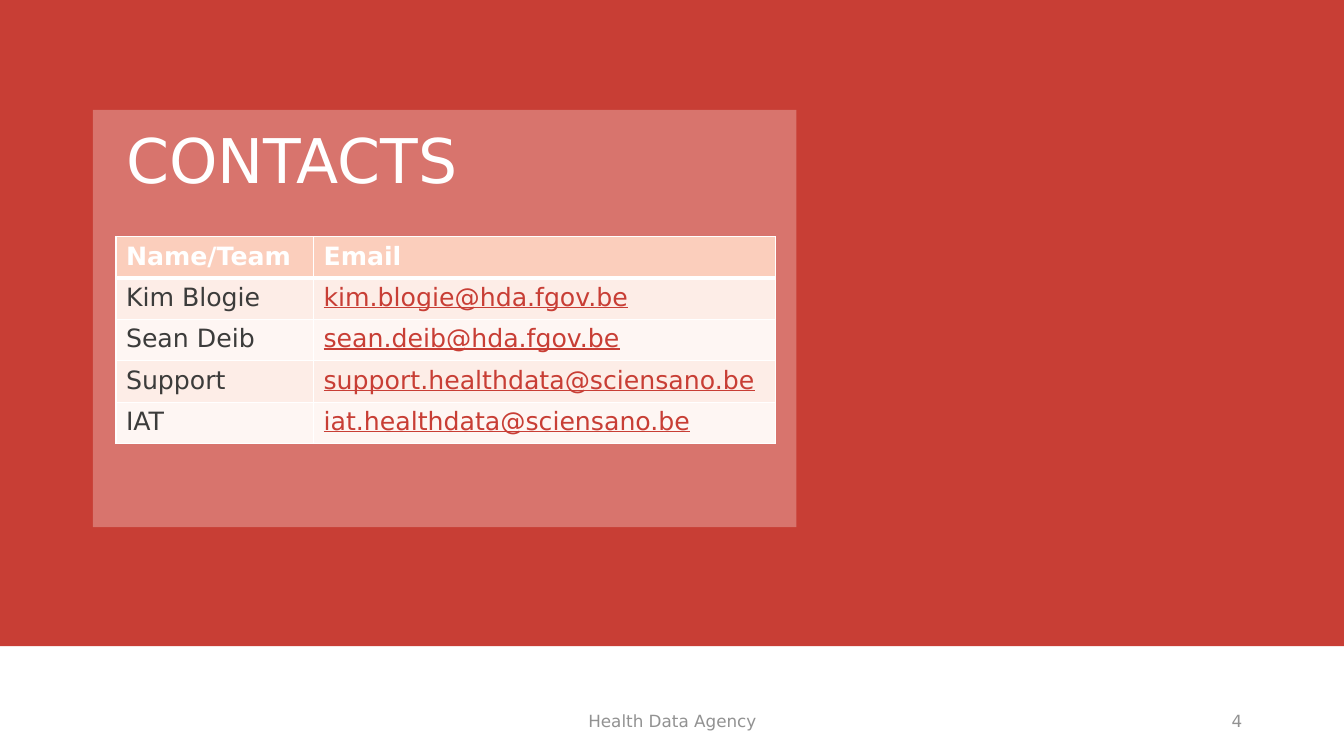
from lxml import etree
from pptx import Presentation
from pptx.dml.color import RGBColor
from pptx.enum.shapes import MSO_SHAPE
from pptx.enum.text import MSO_ANCHOR, MSO_AUTO_SIZE, PP_ALIGN
from pptx.oxml.ns import qn
from pptx.util import Inches, Pt

RECTANGLE = MSO_SHAPE.RECTANGLE
MIDDLE = MSO_ANCHOR.MIDDLE
NO_AUTOFIT = MSO_AUTO_SIZE.NONE
LEFT, CENTER, RIGHT = PP_ALIGN.LEFT, PP_ALIGN.CENTER, PP_ALIGN.RIGHT

WHITE = RGBColor(0xFF, 0xFF, 0xFF)
RED = RGBColor(0xC8, 0x3E, 0x35)
PINK = RGBColor(0xDF, 0x8B, 0x85)
GREY = RGBColor(0x92, 0x92, 0x92)
DARK = RGBColor(0x3C, 0x3C, 0x3B)
HEADER_FILL = RGBColor(0xFB, 0xCE, 0xBC)
BAND_FILLS = (RGBColor(0xFD, 0xED, 0xE7), RGBColor(0xFE, 0xF6, 0xF3))

CONTACTS = [
    ("Name/Team", "Email"),
    ("Kim Blogie", "kim.blogie@hda.fgov.be"),
    ("Sean Deib", "sean.deib@hda.fgov.be"),
    ("Support", "support.healthdata@sciensano.be"),
    ("IAT", "iat.healthdata@sciensano.be"),
]


class ContactSlide:
    font_name = "DejaVu Sans"

    def __init__(self, presentation):
        self.slide = presentation.slides.add_slide(presentation.slide_layouts[5])
        self.shapes = self.slide.shapes

    def style(self, paragraph, size, color, align=LEFT, bold=False, underline=False):
        paragraph.alignment = align
        font = paragraph.font
        font.name = self.font_name
        font.size = Pt(size)
        font.color.rgb = color
        font.bold = bold
        font.underline = underline

    def panel(self, left, top, width, height, color, opacity=100):
        panel = self.shapes.add_shape(
            RECTANGLE, Inches(left), Inches(top), Inches(width), Inches(height))
        panel.shadow.inherit = False
        panel.fill.solid()
        panel.fill.fore_color.rgb = color
        panel.line.fill.background()
        if opacity < 100:
            tint = panel.element.spPr.find(qn("a:solidFill"))[0]
            etree.SubElement(tint, qn("a:alpha"), val=str(opacity * 1000))

    def title(self, text, left, top, width, height):
        title = self.shapes.title
        title.element.getparent().append(title.element)
        title.left, title.top = Inches(left), Inches(top)
        title.width, title.height = Inches(width), Inches(height)
        frame = title.text_frame
        frame.text = text
        frame.word_wrap = True
        frame.auto_size = NO_AUTOFIT
        frame.vertical_anchor = MIDDLE
        frame.paragraphs[0].line_spacing = 0.9
        self.style(frame.paragraphs[0], 44, WHITE)

    def footer(self, text, left, width, align):
        footer = self.shapes.add_textbox(
            Inches(left), Inches(6.95), Inches(width), Inches(0.4))
        frame = footer.text_frame
        frame.text = text
        frame.word_wrap = True
        frame.vertical_anchor = MIDDLE
        self.style(frame.paragraphs[0], 12, GREY, align)

    def border(self, cell, bottom_width):
        properties = cell._tc.get_or_add_tcPr()
        for side, width in (("L", 1), ("R", 1), ("T", 1), ("B", bottom_width)):
            line = etree.SubElement(properties, qn(f"a:ln{side}"), w=str(Pt(width)))
            fill = etree.SubElement(line, qn("a:solidFill"))
            etree.SubElement(fill, qn("a:srgbClr"), val=str(WHITE))

    def table(self, rows, left, top, column_widths, row_height):
        table = self.shapes.add_table(
            len(rows), len(column_widths), Inches(left), Inches(top),
            Inches(sum(column_widths)), Inches(row_height * len(rows))).table
        for column, width in zip(table.columns, column_widths):
            column.width = Inches(width)
        for r, texts in enumerate(rows):
            table.rows[r].height = Inches(row_height)
            header = r == 0
            for c, text in enumerate(texts):
                cell = table.cell(r, c)
                cell.text = text
                self.border(cell, 3 if header else 1)
                cell.fill.solid()
                cell.fill.fore_color.rgb = HEADER_FILL if header else BAND_FILLS[(r - 1) % 2]
                email = c == 1 and not header
                color = WHITE if header else RED if email else DARK
                self.style(cell.text_frame.paragraphs[0], 18, color,
                           bold=header, underline=email)


def main():
    presentation = Presentation()
    presentation.slide_width = Inches(13.33)
    presentation.slide_height = Inches(7.5)

    contacts = ContactSlide(presentation)
    contacts.panel(0, 0, 13.33, 6.41, RED)
    contacts.panel(0.92, 1.09, 6.98, 4.14, PINK, opacity=70)
    contacts.footer("Health Data Agency", 4.42, 4.5, CENTER)
    contacts.footer("4", 9.42, 3, RIGHT)
    contacts.title("CONTACTS", 1.15, 0.9, 6.4, 1.45)
    contacts.table(CONTACTS, 1.15, 2.35, (1.96, 4.58), 0.41)

    presentation.save("out.pptx")


if __name__ == "__main__":
    main()
